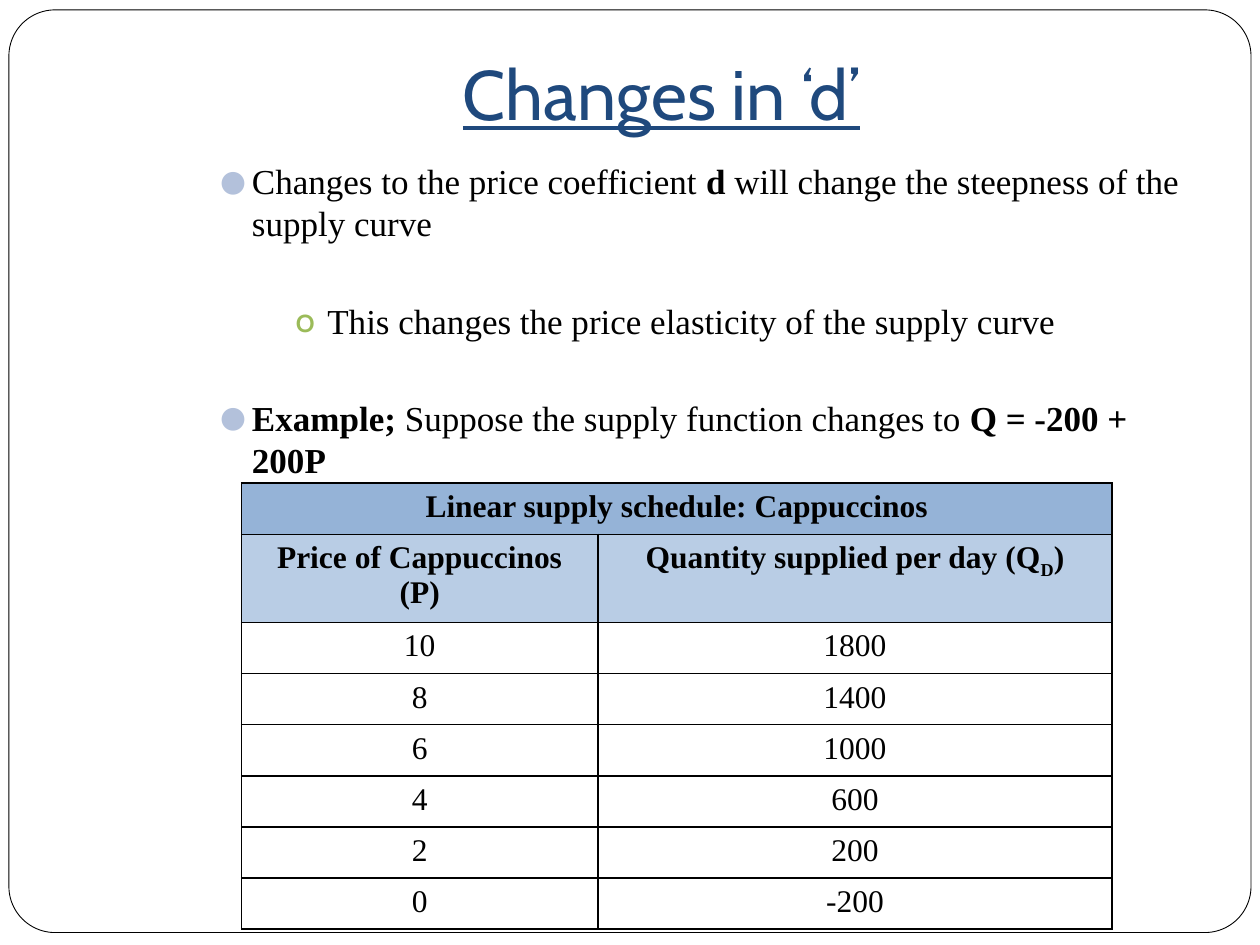
from dataclasses import dataclass

from lxml.etree import SubElement as Sub
from pptx import Presentation
from pptx.dml.color import RGBColor as RGB
from pptx.enum.shapes import MSO_SHAPE as Shape
from pptx.enum.text import MSO_ANCHOR as Anchor, PP_ALIGN as Align
from pptx.oxml.ns import qn
from pptx.util import Cm, Pt


@dataclass(frozen=True)
class Theme:
    ink: str = "000000"
    paper: str = "FFFFFF"
    title: str = "1F497D"
    dot: str = "B3C1DB"
    ring: str = "9BBB59"
    head: str = "95B3D7"
    sub: str = "B9CDE5"
    sans: str = "Cabin"
    serif: str = "Times New Roman"
    big: int = 40
    body: int = 20
    cell: int = 18


T = Theme()


def write(para, parts, size):
    """Fill a paragraph with (text, bold) runs in the serif face."""
    for text, bold in parts:
        run = para.add_run()
        run.text = text
        font = run.font
        font.name, font.size, font.bold = T.serif, Pt(size), bold
        font.color.rgb = RGB.from_string(T.ink)


def tint(parent, tag, color):
    """Add an XML element that holds a plain colour."""
    node = Sub(parent, qn(tag))
    if tag != "a:buClr":
        node.set("w", str(Pt(1)))
        node = Sub(node, qn("a:solidFill"))
    Sub(node, qn("a:srgbClr"), val=color)


deck = Presentation()
deck.slide_width, deck.slide_height = Cm(25.4), Cm(19.05)
slide = deck.slides.add_slide(deck.slide_layouts[6])
shapes = slide.shapes

# Rounded frame
frame = shapes.add_shape(Shape.ROUNDED_RECTANGLE, Cm(0.18), Cm(0.2), Cm(25.04), Cm(18.6))
frame.adjustments[0] = 0.05
frame.shadow.inherit = False
frame.fill.solid()
frame.fill.fore_color.rgb = RGB.from_string(T.paper)
frame.line.color.rgb = RGB.from_string(T.ink)
frame.line.width = Pt(0.5)

# Title
box = shapes.add_textbox(Cm(2.54), Cm(0.76), Cm(21.59), Cm(2.21))
text = box.text_frame
text.word_wrap = True
text.vertical_anchor = Anchor.BOTTOM
text.margin_bottom = Cm(0.25)
text.text = "Changes in ‘d’"
para = text.paragraphs[0]
para.alignment = Align.CENTER
font = para.runs[0].font
font.name, font.size, font.underline = T.sans, Pt(T.big), True
font.color.rgb = RGB.from_string(T.title)

# Bullets: indent in cm, sign, its colour and size, runs
points = [
    (2.29, "●", T.dot, 85, [
        ("Changes to the price coefficient ", False), ("d ", True),
        ("will change the steepness of the supply curve", False)]),
    (3.81, "o", T.ring, 100, [
        ("This changes the price elasticity of the supply curve", False)]),
    (2.29, "●", T.dot, 85, [
        ("Example; ", True), ("Suppose the supply function changes to ", False),
        ("Q = -200 + 200P", True)]),
]
box = shapes.add_textbox(Cm(2.54), Cm(3.1), Cm(21.59), Cm(6.6))
text = box.text_frame
text.word_wrap = True
for i, (left, sign, color, scale, parts) in enumerate(points):
    para = text.add_paragraph() if i else text.paragraphs[0]
    write(para, parts, T.body)
    para.line_spacing = Pt(24)
    para.space_before = Pt(31.5 if i else 0)
    props = para._p.get_or_add_pPr()
    props.set("marL", str(Cm(left)))
    props.set("indent", str(Cm(-0.64)))
    tint(props, "a:buClr", color)
    Sub(props, qn("a:buSzPct"), val=str(scale * 1000))
    Sub(props, qn("a:buFont"), typeface=T.sans)
    Sub(props, qn("a:buChar"), char=sign)

# Supply schedule
rows = [
    ["Linear supply schedule: Cappuccinos", ""],
    ["Price of Cappuccinos (P)", "Quantity supplied per day (Q"],
    ["10", "1800"], ["8", "1400"], ["6", "1000"],
    ["4", "600"], ["2", "200"], ["0", "-200"],
]
fills = [T.head, T.sub]
table = shapes.add_table(len(rows), 2, Cm(4.87), Cm(9.74), Cm(17.55), Cm(8.86)).table
table.columns[0].width, table.columns[1].width = Cm(7.18), Cm(10.37)
for r, row in enumerate(rows):
    table.rows[r].height = Cm(1.65 if r == 1 else 1.03)
    for c, word in enumerate(row):
        cell = table.cell(r, c)
        para = cell.text_frame.paragraphs[0]
        para.alignment = Align.CENTER
        if word:
            write(para, [(word, r < 2)], T.cell)
        props = cell._tc.get_or_add_tcPr()
        for side in "LRTB":
            tint(props, f"a:ln{side}", T.ink)
        if r < len(fills):
            cell.fill.solid()
            cell.fill.fore_color.rgb = RGB.from_string(fills[r])
        else:
            cell.fill.background()
table.cell(0, 0).merge(table.cell(0, 1))

# Subscript in the quantity heading
para = table.cell(1, 1).text_frame.paragraphs[0]
write(para, [("D", True), (")", True)], T.cell)
para.runs[1].font._element.set("baseline", "-25000")

deck.save("out.pptx")
